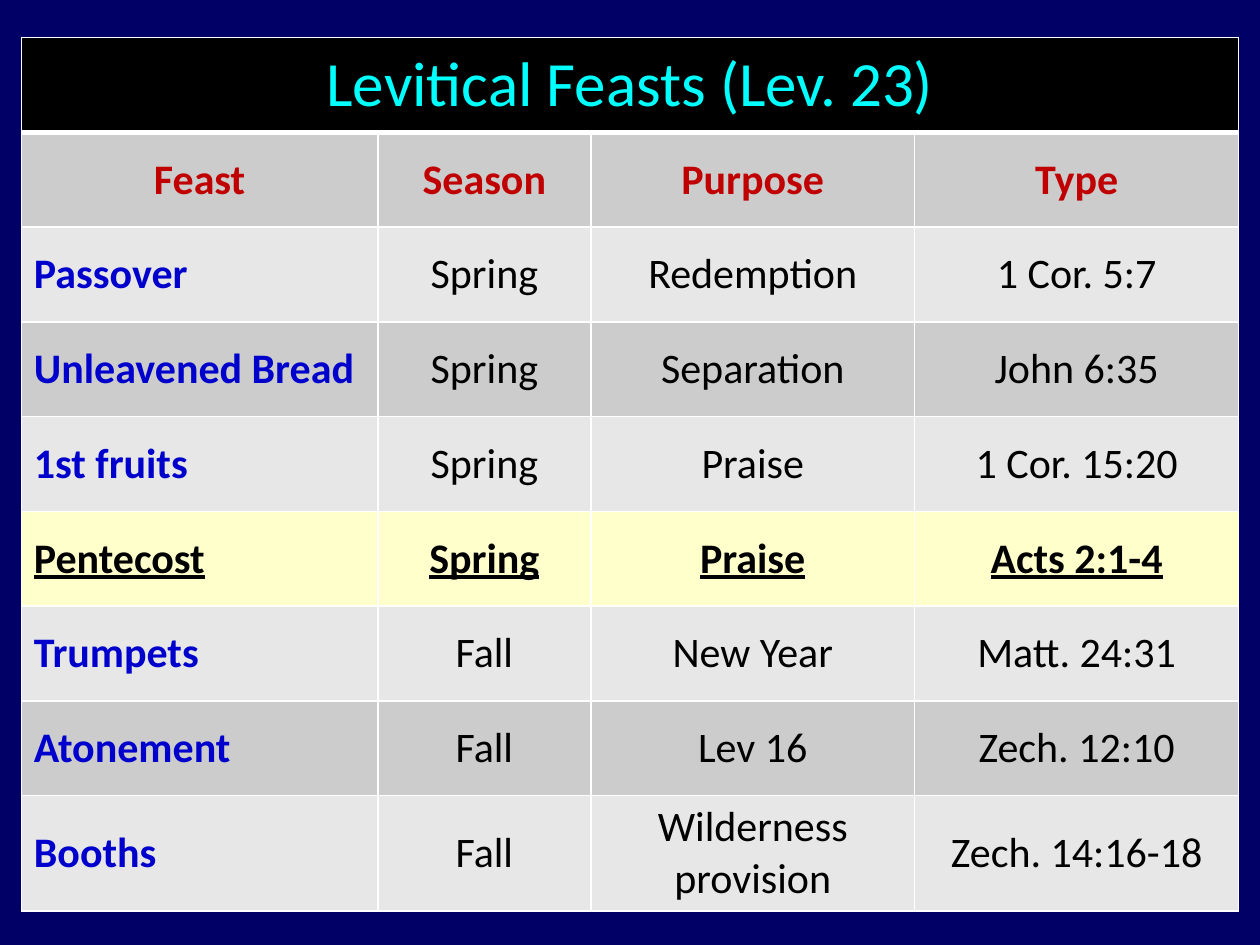
from dataclasses import dataclass

from lxml.etree import SubElement
from pptx import Presentation
from pptx.dml.color import RGBColor
from pptx.enum.text import MSO_ANCHOR, PP_ALIGN
from pptx.oxml.ns import qn
from pptx.util import Cm, Pt


@dataclass(frozen=True)
class Theme:
    font: str = "Calibri"
    title_size: int = 36
    body_size: int = 24
    background: str = "000066"
    title_fill: str = "000000"
    title_text: str = "00FFFF"
    header_text: str = "C00000"
    feast_text: str = "0000CC"
    body_text: str = "000000"
    dark_band: str = "CCCCCC"
    light_band: str = "E7E7E7"
    highlight: str = "FFFFCC"
    border: str = "FFFFFF"


THEME = Theme()
TITLE = "Levitical Feasts (Lev. 23)"
HEADERS = ("Feast", "Season", "Purpose", "Type")
FEASTS = [
    ("Passover", "Spring", "Redemption", "1 Cor. 5:7"),
    ("Unleavened Bread", "Spring", "Separation", "John 6:35"),
    ("1st fruits", "Spring", "Praise", "1 Cor. 15:20"),
    ("Pentecost", "Spring", "Praise", "Acts 2:1-4"),
    ("Trumpets", "Fall", "New Year", "Matt. 24:31"),
    ("Atonement", "Fall", "Lev 16", "Zech. 12:10"),
    ("Booths", "Fall", "Wilderness provision", "Zech. 14:16-18"),
]
HIGHLIGHTED_FEAST = "Pentecost"
COLUMN_WIDTHS = (7.19, 4.29, 6.53, 6.53)
ROW_HEIGHT, LAST_ROW_HEIGHT = 1.91, 2.31


def write_text(cell, text, *, color, size=THEME.body_size, bold=False,
               underline=False, align=PP_ALIGN.CENTER):
    cell.vertical_anchor = MSO_ANCHOR.MIDDLE
    paragraph = cell.text_frame.paragraphs[0]
    paragraph.alignment = align
    run = paragraph.add_run()
    run.text = text
    font = run.font
    font.name, font.size = THEME.font, Pt(size)
    font.bold, font.underline = bold, underline
    font.color.rgb = RGBColor.from_string(color)


def paint_cell(cell, fill, *, top=1, bottom=1):
    """Draw the four borders (widths in points), then fill the cell."""
    properties = cell._tc.get_or_add_tcPr()
    for side, width in (("L", 1), ("R", 1), ("T", top), ("B", bottom)):
        line = SubElement(properties, qn(f"a:ln{side}"), w=str(Pt(width)))
        solid = SubElement(line, qn("a:solidFill"))
        SubElement(solid, qn("a:srgbClr"), val=THEME.border)
    cell.fill.solid()
    cell.fill.fore_color.rgb = RGBColor.from_string(fill)


presentation = Presentation()
presentation.slide_width, presentation.slide_height = Cm(25.4), Cm(19.05)
slide = presentation.slides.add_slide(presentation.slide_layouts[6])
slide.background.fill.solid()
slide.background.fill.fore_color.rgb = RGBColor.from_string(THEME.background)

row_count = len(FEASTS) + 2
table = slide.shapes.add_table(
    row_count, len(HEADERS), Cm(0.43), Cm(0.76), Cm(sum(COLUMN_WIDTHS)),
    Cm(ROW_HEIGHT * (row_count - 1) + LAST_ROW_HEIGHT)).table
for column, width in zip(table.columns, COLUMN_WIDTHS):
    column.width = Cm(width)
for row in table.rows:
    row.height = Cm(ROW_HEIGHT)
table.rows[row_count - 1].height = Cm(LAST_ROW_HEIGHT)

# Title row across all columns
for cell in table.rows[0].cells:
    paint_cell(cell, THEME.title_fill, bottom=3)
table.cell(0, 0).merge(table.cell(0, len(HEADERS) - 1))
write_text(table.cell(0, 0), TITLE, color=THEME.title_text, size=THEME.title_size)

# Column headings
for cell, heading in zip(table.rows[1].cells, HEADERS):
    paint_cell(cell, THEME.dark_band, top=3)
    write_text(cell, heading, color=THEME.header_text, bold=True)

# One row per feast, in alternating bands
for row_index, feast in enumerate(FEASTS, start=2):
    highlighted = feast[0] == HIGHLIGHTED_FEAST
    band = THEME.dark_band if row_index % 2 else THEME.light_band
    for column_index, text in enumerate(feast):
        is_name = column_index == 0
        cell = table.cell(row_index, column_index)
        paint_cell(cell, THEME.highlight if highlighted else band)
        write_text(
            cell, text,
            color=THEME.feast_text if is_name and not highlighted else THEME.body_text,
            bold=is_name or highlighted,
            underline=highlighted,
            align=PP_ALIGN.LEFT if is_name else PP_ALIGN.CENTER)

presentation.save("out.pptx")
